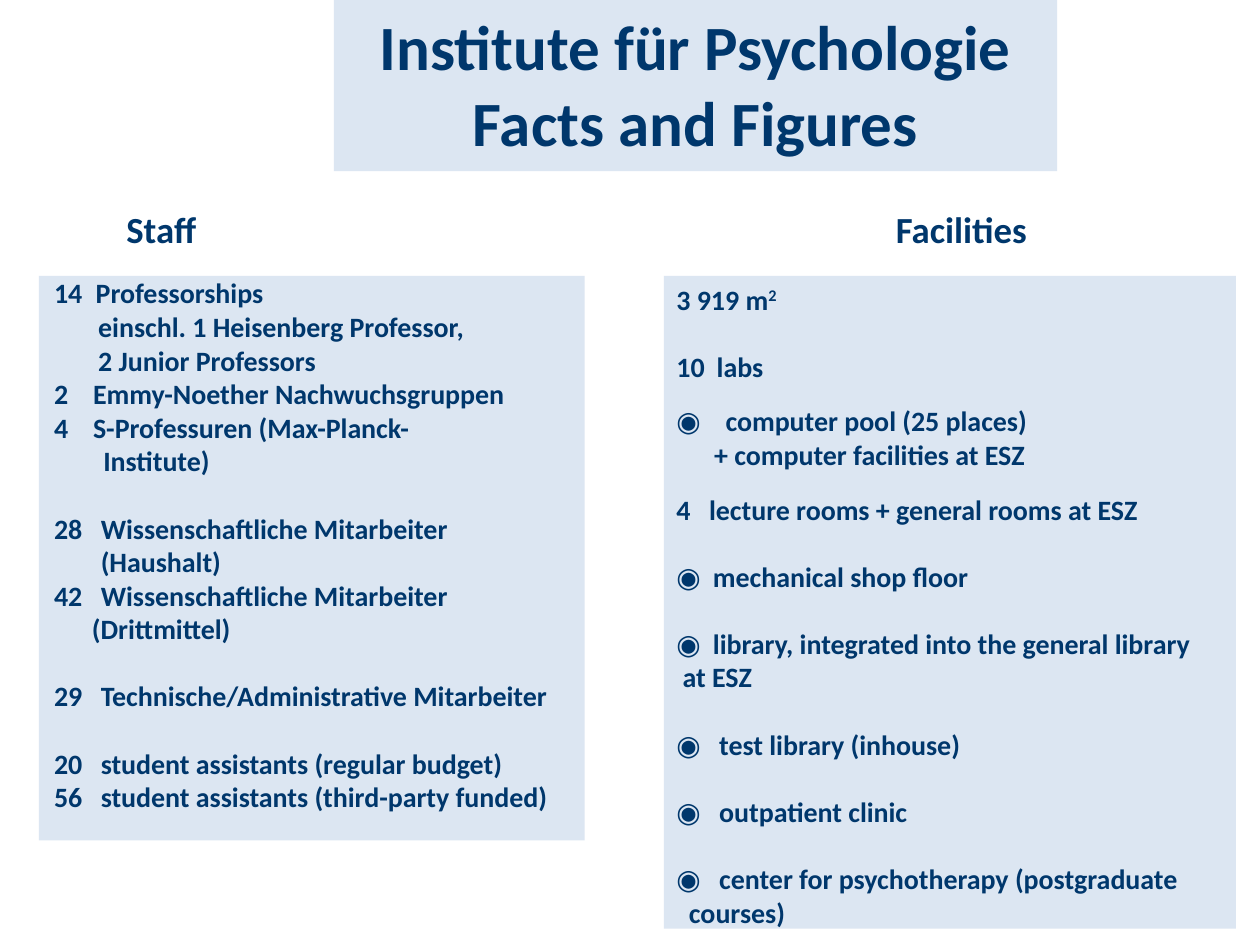
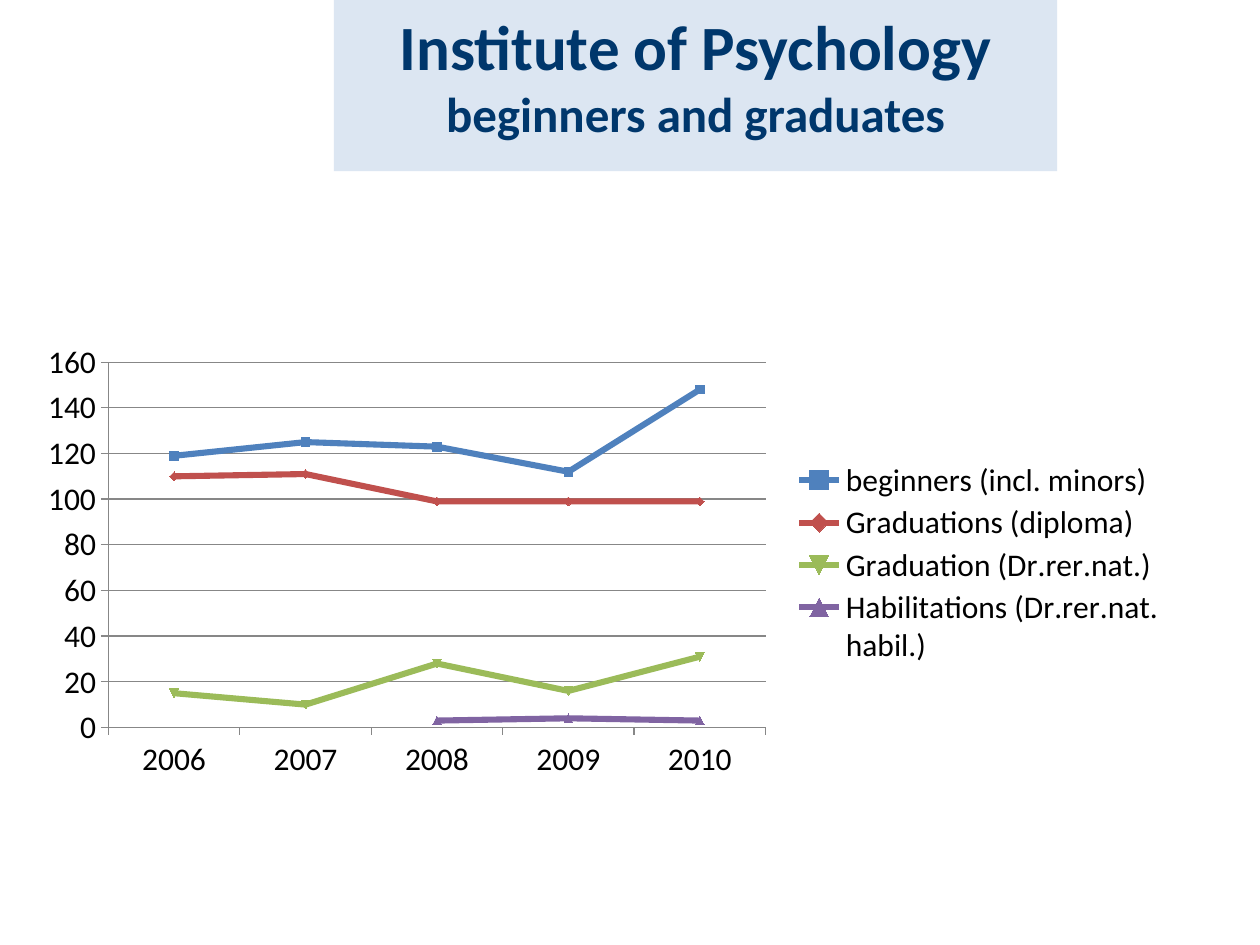
from dataclasses import dataclass

import pptx
import pptx.chart.data
import pptx.dml.color
import pptx.enum.chart
import pptx.enum.shapes
import pptx.enum.text
import pptx.oxml
import pptx.oxml.ns
import pptx.util

Inches = pptx.util.Inches
Pt = pptx.util.Pt
RGB = pptx.dml.color.RGBColor


@dataclass(frozen=True)
class Theme:
    navy: RGB = RGB(0x00, 0x37, 0x6C)
    pale_blue: RGB = RGB(0xDC, 0xE6, 0xF2)
    black: RGB = RGB(0, 0, 0)
    grid_gray: RGB = RGB(0x87, 0x87, 0x87)
    font: str = "Calibri"
    bullet_font: str = "Arial"
    title: Pt = Pt(36)
    subtitle: Pt = Pt(28)
    heading: Pt = Pt(21)
    body: Pt = Pt(16)
    chart: Pt = Pt(18)
    chart_line: Pt = Pt(3.5)
    thin_line: Pt = Pt(0.75)


@dataclass(frozen=True)
class Box:
    left: float
    top: float
    width: float
    height: float

    def lengths(self) -> tuple:
        return tuple(Inches(v) for v in (self.left, self.top, self.width, self.height))


@dataclass(frozen=True)
class Insets:
    left: float
    top: float
    right: float
    bottom: float


@dataclass(frozen=True)
class Entry:
    marker: str
    text: str
    indent: float
    gap: float = 0
    superscript: str = ""


@dataclass(frozen=True)
class Column:
    heading: str
    heading_box: Box
    panel_box: Box
    insets: Insets
    entries: tuple


@dataclass(frozen=True)
class Trend:
    name: str
    values: tuple
    color: RGB


THEME = Theme()
TITLE_BOX = Box(2.65, 0, 5.74, 1.36)
TITLE_INSETS = Insets(0.08, 0.06, 0.08, 0.04)
HEADING_INSETS = Insets(0.08, 0.04, 0.08, 0.04)
FULL_GAP, SMALL_GAP = 19.2, 12
DOT = "◉"

STAFF = Column(
    "Staff", Box(0.05, 1.6, 2.46, 0.55), Box(0.31, 2.19, 4.33, 4.48),
    Insets(0.12, 0, 0.24, 0),
    (
        Entry("14", "Professorships", 0.33),
        Entry("", "einschl. 1 Heisenberg Professor,", 0.35),
        Entry("", "2 Junior Professors", 0.35),
        Entry("2", "Emmy-Noether Nachwuchsgruppen", 0.31),
        Entry("4", "S-Professuren (Max-Planck-", 0.31),
        Entry("", "Institute)", 0.39),
        Entry("28", "Wissenschaftliche Mitarbeiter (Haushalt)", 0.37, FULL_GAP),
        Entry("42", "Wissenschaftliche Mitarbeiter", 0.37),
        Entry("", "(Drittmittel)", 0.3),
        Entry("29", "Technische/Administrative Mitarbeiter", 0.37, FULL_GAP),
        Entry("20", "student assistants (regular budget)", 0.37, FULL_GAP),
        Entry("56", "student assistants (third-party funded)", 0.37),
    ),
)

FACILITIES = Column(
    "Facilities", Box(5.89, 1.6, 3.48, 0.55), Box(5.27, 2.19, 4.54, 5.18),
    Insets(0.1, 0.05, 0.1, 0.05),
    (
        Entry("", "3 919 m", 0, superscript="2"),
        Entry("10", "labs", 0.32, FULL_GAP),
        Entry(DOT, "computer pool (25 places)", 0.39, SMALL_GAP),
        Entry("", "+ computer facilities at ESZ", 0.3),
        Entry("4", "lecture rooms + general rooms at ESZ", 0.26, SMALL_GAP),
        Entry(DOT, "mechanical shop floor", 0.29, FULL_GAP),
        Entry(DOT, "library, integrated into the general library", 0.29, FULL_GAP),
        Entry("", "at ESZ", 0.05),
        Entry(DOT, "test library (inhouse)", 0.34, FULL_GAP),
        Entry(DOT, "outpatient clinic", 0.34, FULL_GAP),
        Entry(DOT, "center for psychotherapy (postgraduate", 0.34, FULL_GAP),
        Entry("", "courses)", 0.1),
    ),
)

YEARS = ("2006", "2007", "2008", "2009", "2010")
TRENDS = (
    Trend("beginners (incl. minors)", (119, 125, 123, 112, 148), RGB(0x4F, 0x81, 0xBD)),
    Trend("Graduations (diploma)", (110, 111, 99, 99, 99), RGB(0xC0, 0x50, 0x4D)),
    Trend("Graduation (Dr.rer.nat.)", (15, 10, 28, 16, 31), RGB(0x9B, 0xBB, 0x59)),
    Trend("Habilitations (Dr.rer.nat. habil.)", (None, None, 3, 4, 3), RGB(0x80, 0x64, 0xA2)),
)


def style_font(font, size: Pt, color: RGB, bold: bool, name: str = THEME.font) -> None:
    font.name, font.size, font.bold = name, size, bold
    font.color.rgb = color


def prepare_frame(frame, insets: Insets) -> None:
    frame.word_wrap = True
    frame.vertical_anchor = pptx.enum.text.MSO_ANCHOR.TOP
    frame.margin_left, frame.margin_right = Inches(insets.left), Inches(insets.right)
    frame.margin_top, frame.margin_bottom = Inches(insets.top), Inches(insets.bottom)


def add_panel(slide, box: Box, insets: Insets):
    panel = slide.shapes.add_shape(pptx.enum.shapes.MSO_SHAPE.RECTANGLE, *box.lengths())
    panel.shadow.inherit = False
    panel.fill.solid()
    panel.fill.fore_color.rgb = THEME.pale_blue
    panel.line.fill.background()
    prepare_frame(panel.text_frame, insets)
    return panel.text_frame


def write_centered(frame, text: str, sizes: tuple) -> None:
    frame.text = text
    for paragraph, size in zip(frame.paragraphs, sizes):
        paragraph.alignment = pptx.enum.text.PP_ALIGN.CENTER
        for run in paragraph.runs:
            style_font(run.font, size, THEME.navy, True)


def add_title(slide, text: str, sizes: tuple) -> None:
    write_centered(add_panel(slide, TITLE_BOX, TITLE_INSETS), text, sizes)


def write_entry(paragraph, entry: Entry) -> None:
    paragraph.alignment = pptx.enum.text.PP_ALIGN.LEFT
    properties = paragraph._p.get_or_add_pPr()
    properties.set("marL", str(Inches(entry.indent)))
    properties.set("indent", str(-Inches(entry.indent) if entry.marker else 0))
    if entry.gap:
        paragraph.space_before = Pt(entry.gap)
    if entry.marker:
        marker = paragraph.add_run()
        marker.text = entry.marker
        name = THEME.bullet_font if entry.marker == DOT else THEME.font
        style_font(marker.font, THEME.body, THEME.navy, True, name)
    wording = paragraph.add_run()
    wording.text = f"\t{entry.text}" if entry.marker else entry.text
    style_font(wording.font, THEME.body, THEME.navy, True)
    if entry.superscript:
        exponent = paragraph.add_run()
        exponent.text = entry.superscript
        style_font(exponent.font, THEME.body, THEME.navy, True)
        exponent._r.get_or_add_rPr().set("baseline", "30000")


def add_column(slide, column: Column) -> None:
    heading = slide.shapes.add_textbox(*column.heading_box.lengths()).text_frame
    prepare_frame(heading, HEADING_INSETS)
    write_centered(heading, column.heading, (THEME.heading,))
    frame = add_panel(slide, column.panel_box, column.insets)
    for index, entry in enumerate(column.entries):
        write_entry(frame.add_paragraph() if index else frame.paragraphs[0], entry)


def place_part(part, index: int, area: Box, inner: bool = False) -> None:
    for layout in part.findall(pptx.oxml.ns.qn("c:layout")):
        part.remove(layout)
    target = '<c:layoutTarget val="inner"/>' if inner else ""
    sizes = zip("xywh", (area.left, area.top, area.width, area.height))
    part.insert(index, pptx.oxml.parse_xml(
        f'<c:layout {pptx.oxml.ns.nsdecls("c")}><c:manualLayout>{target}'
        '<c:xMode val="edge"/><c:yMode val="edge"/>'
        + "".join(f'<c:{key} val="{value}"/>' for key, value in sizes)
        + "</c:manualLayout></c:layout>"))


def add_trend_chart(slide, box: Box) -> None:
    data = pptx.chart.data.CategoryChartData()
    data.categories = YEARS
    for trend in TRENDS:
        data.add_series(trend.name, trend.values)
    chart = slide.shapes.add_chart(
        pptx.enum.chart.XL_CHART_TYPE.LINE_MARKERS, *box.lengths(), data).chart
    chart.has_title = False
    style_font(chart.font, THEME.chart, THEME.black, False)

    values = chart.value_axis
    values.minimum_scale, values.maximum_scale, values.major_unit = 0, 160, 20
    values.has_major_gridlines = True
    for axis in (chart.category_axis, values):
        axis.major_tick_mark = pptx.enum.chart.XL_TICK_MARK.OUTSIDE
        style_font(axis.tick_labels.font, THEME.chart, THEME.black, False)
    for line in (chart.category_axis.format.line, values.format.line,
                 values.major_gridlines.format.line):
        line.color.rgb, line.width = THEME.grid_gray, THEME.thin_line

    chart.plots[0].vary_by_categories = False
    for series, trend in zip(chart.plots[0].series, TRENDS):
        series.smooth = False
        series.format.line.color.rgb = trend.color
        series.format.line.width = THEME.chart_line
        series.marker.format.fill.solid()
        series.marker.format.fill.fore_color.rgb = trend.color
        series.marker.format.line.color.rgb = trend.color

    chart.has_legend = True
    legend = chart.legend
    legend.position = pptx.enum.chart.XL_LEGEND_POSITION.RIGHT
    legend.include_in_layout = False
    style_font(legend.font, THEME.chart, THEME.black, False)
    plot_area = chart.plots[0]._element.getparent()
    place_part(plot_area, 0, Box(0.07, 0.06, 0.57, 0.81), inner=True)
    place_part(legend._element, 1, Box(0.66, 0.27, 0.33, 0.47))


def main() -> None:
    deck = pptx.Presentation()
    deck.slide_width, deck.slide_height = Inches(10), Inches(7.5)
    blank = deck.slide_layouts[6]

    facts = deck.slides.add_slide(blank)
    add_title(facts, "Institute für Psychologie\nFacts and Figures", (THEME.title, THEME.title))
    for column in (STAFF, FACILITIES):
        add_column(facts, column)

    students = deck.slides.add_slide(blank)
    add_title(students, "Institute of Psychology\nbeginners and graduates",
              (THEME.title, THEME.subtitle))
    add_trend_chart(students, Box(0.22, 2.66, 9.15, 3.58))

    deck.save("out.pptx")


if __name__ == "__main__":
    main()
